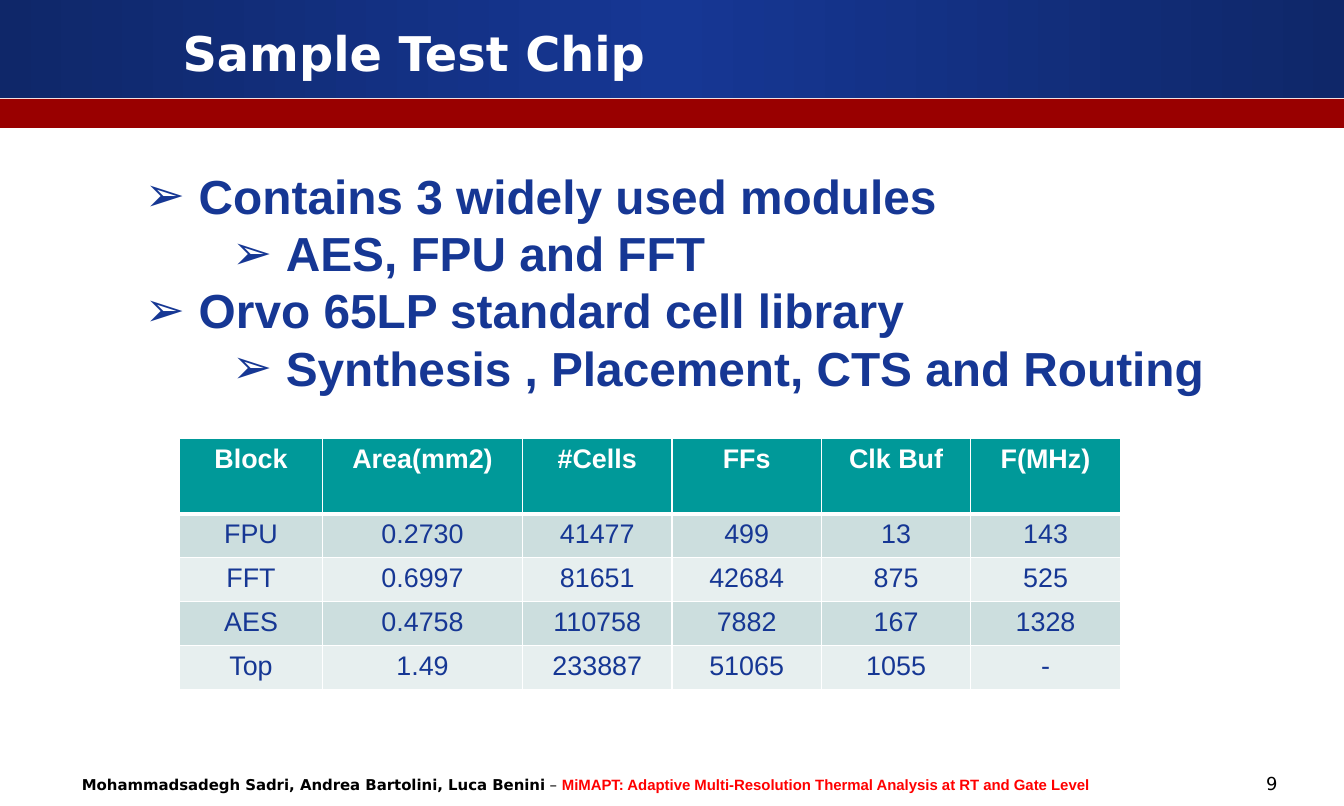
from lxml import etree
from pptx import Presentation
from pptx.dml.color import RGBColor
from pptx.enum import shapes, text
from pptx.oxml import ns
from pptx.util import Inches, Pt

INK = {"navy": "163794", "red": "990000", "alert": "FF0000", "teal": "009999",
       "dark": "CCDEDE", "pale": "E7EFEF", "white": "FFFFFF", "black": "000000"}
SANS, ARIAL = "DejaVu Sans", "Arial"
POINTS = [
    (0, "Contains 3 widely used modules"),
    (1, "AES, FPU and FFT"),
    (0, "Orvo 65LP standard cell library"),
    (1, "Synthesis , Placement, CTS and Routing"),
]
CREDIT = [
    (" ", SANS, "black", False),
    ("Mohammadsadegh Sadri, Andrea Bartolini, Luca Benini", SANS, "black", True),
    (" – ", SANS, "black", False),
    ("MiMAPT: Adaptive Multi-Resolution Thermal Analysis at RT and Gate Level",
     ARIAL, "alert", True),
]
BLOCKS = [
    ["Block", "Area(mm2)", "#Cells", "FFs", "Clk Buf", "F(MHz)"],
    ["FPU", "0.2730", "41477", "499", "13", "143"],
    ["FFT", "0.6997", "81651", "42684", "875", "525"],
    ["AES", "0.4758", "110758", "7882", "167", "1328"],
    ["Top", "1.49", "233887", "51065", "1055", "-"],
]
WIDTHS = [1.33, 1.86] + [1.39] * 4
HEIGHTS = [0.7] + [0.41] * 4


def color(name):
    return RGBColor.from_string(INK[name])


def node(parent, tag, **attrs):
    return etree.SubElement(parent, ns.qn(tag), attrs)


def style(font, face, size, ink, bold=False):
    font.name, font.size, font.bold = face, Pt(size), bold
    font.color.rgb = color(ink)


def add_text(slide, box, words=""):
    frame = slide.shapes.add_textbox(*map(Inches, box)).text_frame
    frame.word_wrap = True
    frame.text = words
    return frame


def add_bar(slide, box):
    bar = slide.shapes.add_shape(shapes.MSO_SHAPE.RECTANGLE, *map(Inches, box))
    bar.shadow.inherit = False
    bar.line.fill.background()
    return bar


def blend(bar):
    """Fill the bar with navy that darkens toward both ends."""
    bar.fill.gradient()
    bar.fill.gradient_angle = 0
    stops = bar._element.spPr.find(".//" + ns.qn("a:gsLst"))
    for stop in list(stops):
        stops.remove(stop)
    for pos in (0, 50, 100):
        stop = node(stops, "a:gs", pos=str(pos * 1000))
        tone = node(stop, "a:srgbClr", val=INK["navy"])
        if pos != 50:
            node(tone, "a:shade", val="46275")


def add_head(slide, left, top, width):
    blend(add_bar(slide, (left, top, width, 0.91)))
    stripe = add_bar(slide, (left, top + 0.92, width, 0.27))
    stripe.fill.solid()
    stripe.fill.fore_color.rgb = color("red")
    title = add_text(slide, (left + 1.6, top + 0.18, 10.56, 0.62), "Sample Test Chip")
    title.vertical_anchor = text.MSO_ANCHOR.MIDDLE
    style(title.paragraphs[0].runs[0].font, SANS, 32, "white", True)


def add_points(slide, box):
    frame = add_text(slide, box)
    for i, (level, words) in enumerate(POINTS):
        para = frame.add_paragraph() if i else frame.paragraphs[0]
        para.text = words
        para.level = level
        props = para._p.get_or_add_pPr()
        props.set("marL", str(Inches(0.5 + 0.81 * level)))
        props.set("indent", str(Inches(-0.5)))
        node(props, "a:buFont", typeface=ARIAL)
        node(props, "a:buChar", char="➢")
        style(para.runs[0].font, ARIAL, 32, "navy", True)


def add_edges(cell, row):
    props = cell._tc.get_or_add_tcPr()
    for side in "LRTB":
        thick = (row, side) in ((0, "B"), (1, "T"))
        line = node(props, "a:ln" + side, w=str(Pt(3 if thick else 1)))
        node(node(line, "a:solidFill"), "a:srgbClr", val=INK["white"])


def add_blocks(slide, left, top):
    box = (left, top, sum(WIDTHS), sum(HEIGHTS))
    table = slide.shapes.add_table(len(BLOCKS), len(WIDTHS), *map(Inches, box)).table
    for col, width in zip(table.columns, WIDTHS):
        col.width = Inches(width)
    for r, (values, height) in enumerate(zip(BLOCKS, HEIGHTS)):
        table.rows[r].height = Inches(height)
        fill = "teal" if r == 0 else "dark" if r % 2 else "pale"
        for c, value in enumerate(values):
            cell = table.cell(r, c)
            add_edges(cell, r)
            cell.fill.solid()
            cell.fill.fore_color.rgb = color(fill)
            cell.text = value
            para = cell.text_frame.paragraphs[0]
            para.alignment = text.PP_ALIGN.CENTER
            style(para.runs[0].font, ARIAL, 18, "navy" if r else "white", r == 0)


def add_foot(slide, left, top):
    para = add_text(slide, (left, top + 0.03, 10.23, 0.44)).paragraphs[0]
    for words, face, ink, bold in CREDIT:
        run = para.add_run()
        run.text = words
        style(run.font, face, 10, ink, bold)
    page = add_text(slide, (left + 10.06, top, 1.3, 0.28), "9").paragraphs[0]
    page.alignment = text.PP_ALIGN.RIGHT
    style(page.runs[0].font, SANS, 12, "black")


def main():
    deck = Presentation()
    deck.slide_width, deck.slide_height = Inches(12.5), Inches(7.5)
    slide = deck.slides.add_slide(deck.slide_layouts[6])
    add_head(slide, 0, 0, 12.5)
    add_foot(slide, 0.62, 7.14)
    add_points(slide, (1.25, 1.5, 10.25, 2.66))
    add_blocks(slide, 1.67, 4.08)
    deck.save("out.pptx")


if __name__ == "__main__":
    main()
